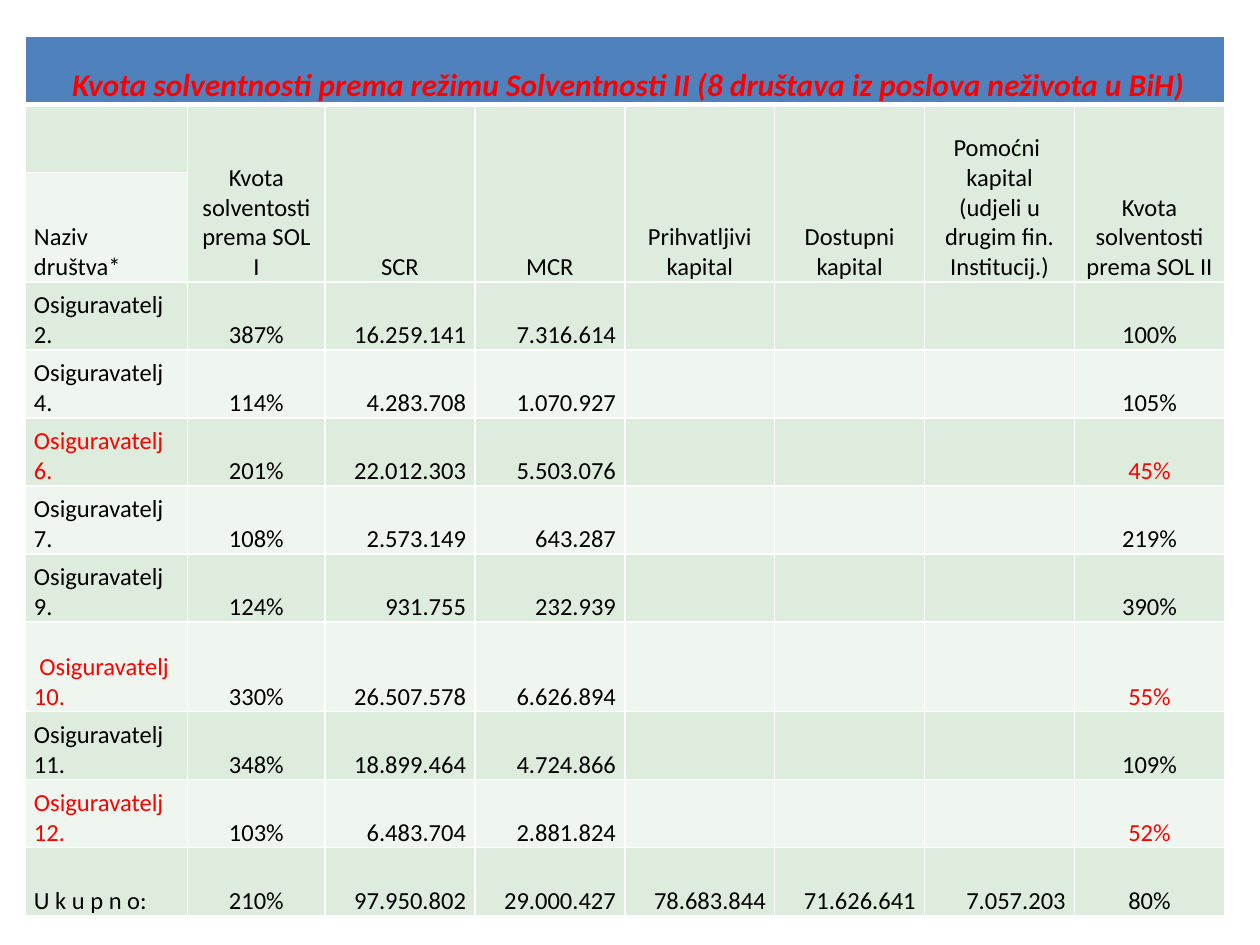
from pptx import Presentation
from pptx.dml.color import RGBColor
from pptx.enum.text import MSO_ANCHOR, PP_ALIGN
from pptx.oxml.ns import qn
from pptx.util import Inches, Pt
from lxml.etree import SubElement

RED = RGBColor(0xFF, 0x00, 0x00)
BLACK = RGBColor(0x00, 0x00, 0x00)
BLUE = RGBColor(0x4F, 0x81, 0xBD)
DARK_BAND = RGBColor(0xDE, 0xEC, 0xDE)
LIGHT_BAND = RGBColor(0xEF, 0xF6, 0xEF)
WHITE = RGBColor(0xFF, 0xFF, 0xFF)

TITLE = " Kvota solventnosti prema režimu Solventnosti II (8 društava iz poslova neživota u BiH)"
HEADERS = ["", "Kvota solventosti prema SOL I", "SCR", "MCR", "Prihvatljivi kapital",
           "Dostupni kapital", "Pomoćni  kapital (udjeli u drugim fin. Institucij.)",
           "Kvota solventosti prema SOL II"]
INSURERS = [
    ["Osiguravatelj 2.", "387%", "16.259.141", "7.316.614", "", "", "", "100%"],
    ["Osiguravatelj 4.", "114%", "4.283.708", "1.070.927", "", "", "", "105%"],
    ["Osiguravatelj 6.", "201%", "22.012.303", "5.503.076", "", "", "", "45%"],
    ["Osiguravatelj 7.", "108%", "2.573.149", "643.287", "", "", "", "219%"],
    ["Osiguravatelj 9.", "124%", "931.755", "232.939", "", "", "", "390%"],
    [" Osiguravatelj 10.", "330%", "26.507.578", "6.626.894", "", "", "", "55%"],
    ["Osiguravatelj 11.", "348%", "18.899.464", "4.724.866", "", "", "", "109%"],
    ["Osiguravatelj 12.", "103%", "6.483.704", "2.881.824", "", "", "", "52%"],
    ["U k u p n o:", "210%", "97.950.802", "29.000.427",
     "78.683.844", "71.626.641", "7.057.203", "80%"],
]
ROWS = [[TITLE] + [""] * 7, HEADERS, ["Naziv društva*"] + [""] * 7] + INSURERS
RED_ROWS = {5, 8, 10}  # insurers whose ratio falls short under the new regime
COLUMN_WIDTHS = [1.29, 1.09] + [1.19] * 6
ROW_HEIGHTS = [0.54, 0.54, 0.87] + [0.54] * 5 + [0.71] + [0.54] * 3
LEFT, CENTER, RIGHT = PP_ALIGN.LEFT, PP_ALIGN.CENTER, PP_ALIGN.RIGHT
VALUE_ALIGNMENTS = [LEFT, CENTER] + [RIGHT] * 5 + [CENTER]


def style_cell(cell, fill_color, top_width, bottom_width):
    """Give a cell its margins, anchor, white borders and fill."""
    cell.margin_left = cell.margin_right = Inches(0.07)
    cell.margin_top = cell.margin_bottom = 0
    cell.vertical_anchor = MSO_ANCHOR.BOTTOM
    properties = cell._tc.get_or_add_tcPr()
    for side, width in (("L", 1), ("R", 1), ("T", top_width), ("B", bottom_width)):
        line = SubElement(properties, qn(f"a:ln{side}"), w=str(Pt(width)))
        fill = SubElement(line, qn("a:solidFill"))
        SubElement(fill, qn("a:srgbClr"), val=str(WHITE))
    cell.fill.solid()
    cell.fill.fore_color.rgb = fill_color


presentation = Presentation()
presentation.slide_width = Inches(10)
presentation.slide_height = Inches(7.5)
slide = presentation.slides.add_slide(presentation.slide_layouts[6])

# Table grid
table = slide.shapes.add_table(
    len(ROWS), len(HEADERS), Inches(0.2), Inches(0.29),
    Inches(sum(COLUMN_WIDTHS)), Inches(sum(ROW_HEIGHTS))).table
for column, width in zip(table.columns, COLUMN_WIDTHS):
    column.width = Inches(width)
for row, height in zip(table.rows, ROW_HEIGHTS):
    row.height = Inches(height)

# Title across the top, headers over two rows
table.cell(0, 0).merge(table.cell(0, 7))
for column_index in range(1, 8):
    table.cell(1, column_index).merge(table.cell(2, column_index))

# Cell styles and text
for row_index, texts in enumerate(ROWS):
    is_title = row_index == 0
    band = BLUE if is_title else DARK_BAND if row_index % 2 else LIGHT_BAND
    for column_index, text in enumerate(texts):
        cell = table.cell(row_index, column_index)
        style_cell(cell, band, 3 if row_index == 1 else 1, 3 if is_title else 1)
        if not text:
            continue
        paragraph = cell.text_frame.paragraphs[0]
        paragraph.alignment = CENTER if row_index < 2 else VALUE_ALIGNMENTS[column_index]
        run = paragraph.add_run()
        run.text = text
        run.font.name = "Calibri"
        run.font.size = Pt(18 if is_title else 14)
        run.font.bold = run.font.italic = is_title
        is_red = is_title or (row_index in RED_ROWS and column_index in (0, 7))
        run.font.color.rgb = RED if is_red else BLACK

presentation.save("out.pptx")
